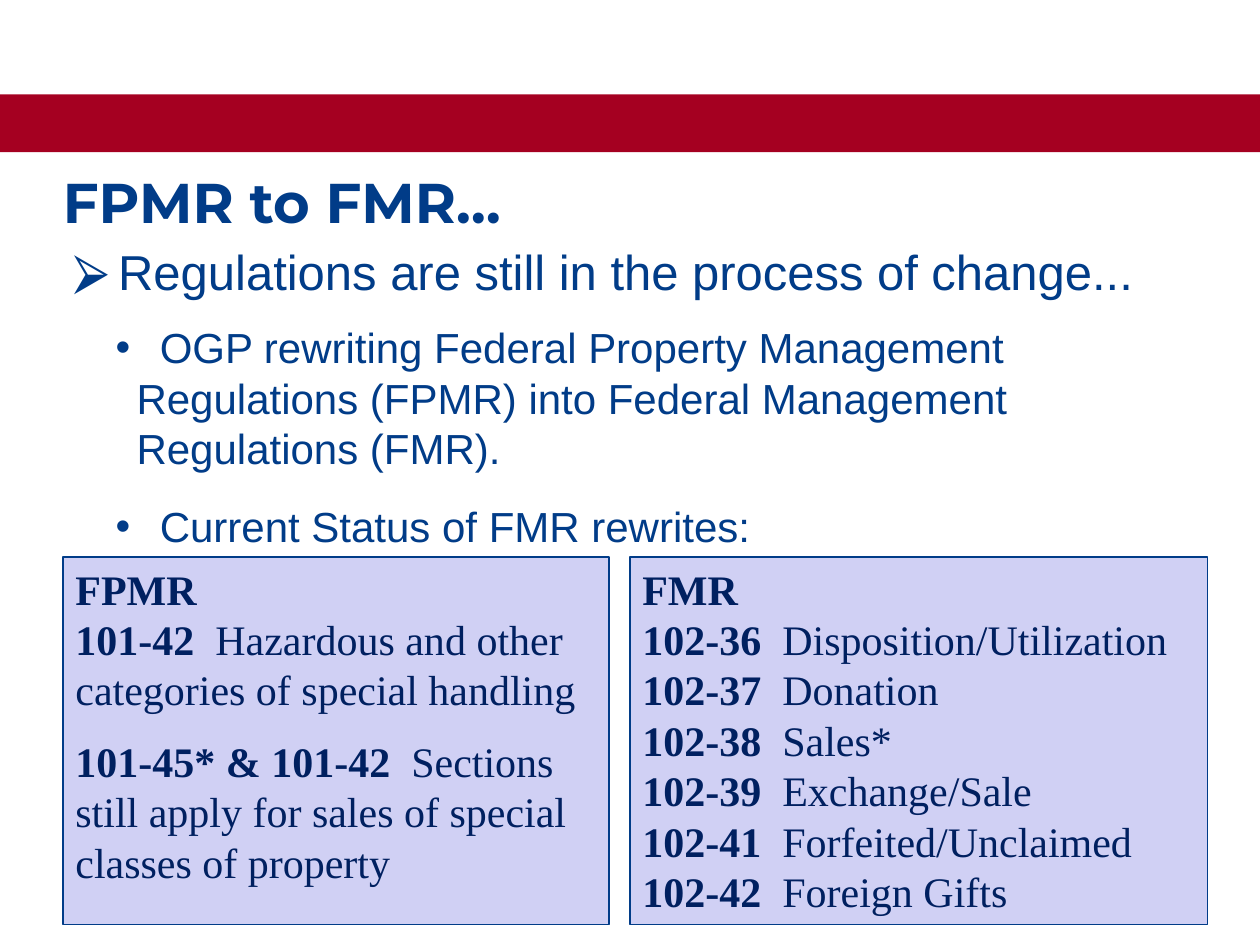
from lxml.etree import SubElement
from pptx import Presentation
from pptx.dml.color import RGBColor
from pptx.enum.shapes import MSO_SHAPE
from pptx.enum.text import MSO_ANCHOR, PP_ALIGN
from pptx.oxml.ns import qn
from pptx.util import Pt

RED, BLUE, NAVY, LILAC = "A50021", "013C88", "002060", "D0D0F4"
LEADING = 1.2
GAP = 12

TITLE = dict(name="Montserrat", size=Pt(32), bold=True, color=BLUE)
POINT = dict(name="Arial", size=Pt(28), bold=False, color=BLUE)
SUBPOINT = dict(POINT, size=Pt(24))
ENTRY = dict(name="Times New Roman", size=Pt(24), bold=False, color=NAVY)
CODE = dict(ENTRY, bold=True)


def rgb(value):
    return RGBColor.from_string(value)


class SlideBuilder:
    def __init__(self, prs):
        self.s = prs.slides.add_slide(prs.slide_layouts[6])

    def rect(self, x, y, w, h, fill, line=None, weight=0.75):
        sp = self.s.shapes.add_shape(MSO_SHAPE.RECTANGLE, Pt(x), Pt(y), Pt(w), Pt(h))
        sp.shadow.inherit = False
        sp.fill.solid()
        sp.fill.fore_color.rgb = rgb(fill)
        if line:
            sp.line.color.rgb = rgb(line)
            sp.line.width = Pt(weight)
        else:
            sp.line.fill.background()
        return sp

    def text(self, x, y, w, h):
        """Add an empty wrapping text box without insets; return its frame."""
        tf = self.s.shapes.add_textbox(Pt(x), Pt(y), Pt(w), Pt(h)).text_frame
        tf.word_wrap = True
        for side in ("left", "top", "right", "bottom"):
            setattr(tf, f"margin_{side}", 0)
        return tf

    def run(self, p, text, style):
        r = p.add_run()
        r.text = text
        for key, value in style.items():
            if key == "color":
                r.font.color.rgb = rgb(value)
            else:
                setattr(r.font, key, value)

    def paragraph(self, tf, runs, before=0, tabs=(), bullet=None, margin=0, hang=0, level=0):
        """Add a paragraph of (text, style) runs, reusing the frame's empty first one."""
        p = tf.paragraphs[0]
        if p.runs:
            p = tf.add_paragraph()
        p.level = level
        p.alignment = PP_ALIGN.LEFT
        p.line_spacing = Pt(runs[0][1]["size"].pt * LEADING)
        p.space_before = Pt(before)
        pPr = p._p.get_or_add_pPr()
        if bullet:
            pPr.set("marL", str(int(Pt(margin))))
            pPr.set("indent", str(-int(Pt(hang))))
            clr = SubElement(pPr, qn("a:buClr"))
            SubElement(clr, qn("a:srgbClr"), val=BLUE)
            SubElement(pPr, qn("a:buFont"), typeface="Arial")
            SubElement(pPr, qn("a:buChar"), char=bullet)
        if tabs:
            tab_list = SubElement(pPr, qn("a:tabLst"))
            for pos in tabs:
                SubElement(tab_list, qn("a:tab"), pos=str(int(Pt(pos))), algn="l")
        for text, style in runs:
            self.run(p, text, style)

    def panel(self, x, w, heading, entries, weight):
        """Add a framed list of (code, description, tab, space before) entries."""
        tf = self.rect(x, 318.25, w, 210, LILAC, BLUE, weight).text_frame
        tf.word_wrap = True
        tf.vertical_anchor = MSO_ANCHOR.TOP
        self.paragraph(tf, [(heading, CODE)])
        for code, description, tab, before in entries:
            runs = [(code, CODE), ("\t" + description, ENTRY)]
            self.paragraph(tf, runs, before, [tab])


def main():
    prs = Presentation()
    prs.slide_width, prs.slide_height = Pt(720), Pt(540)
    b = SlideBuilder(prs)

    b.rect(0, 54, 720, 33, RED)

    rewritten = [("102-36", "Disposition/Utilization"), ("102-37", "Donation"),
                 ("102-38", "Sales*"), ("102-39", "Exchange/Sale"),
                 ("102-41", "Forfeited/Unclaimed"), ("102-42", "Foreign Gifts")]
    b.panel(360, 330, "FMR", [(code, name, 80, 0) for code, name in rewritten], 0.75)

    remaining = [
        ("101-42", "Hazardous and other categories of special handling", 80, 0),
        ("101-45* & 101-42", "Sections still apply for sales of special classes of property",
         192, GAP),
    ]
    b.panel(36, 312, "FPMR", remaining, 0.87)

    body = b.text(42, 138.25, 636, 179)
    b.paragraph(body, [("Regulations are still in the process of change...", POINT)],
                bullet="⮚", margin=25.5, hang=25.5)
    subpoints = [
        ("OGP rewriting Federal Property Management Regulations (FPMR) "
         "into Federal Management Regulations (FMR).", GAP),
        ("Current Status of FMR rewrites:", 16),
    ]
    margin, extra = 36, 13.3
    for text, before in subpoints:
        # The first line starts further in, whether tabs count from margin or box edge.
        b.paragraph(body, [("\t" + text, SUBPOINT)], before, [extra, margin + extra],
                    bullet="•", margin=margin, hang=12, level=1)

    title = b.text(36, 96, 268, 39)
    b.run(title.paragraphs[0], "FPMR to FMR…", TITLE)

    prs.save("out.pptx")


if __name__ == "__main__":
    main()
